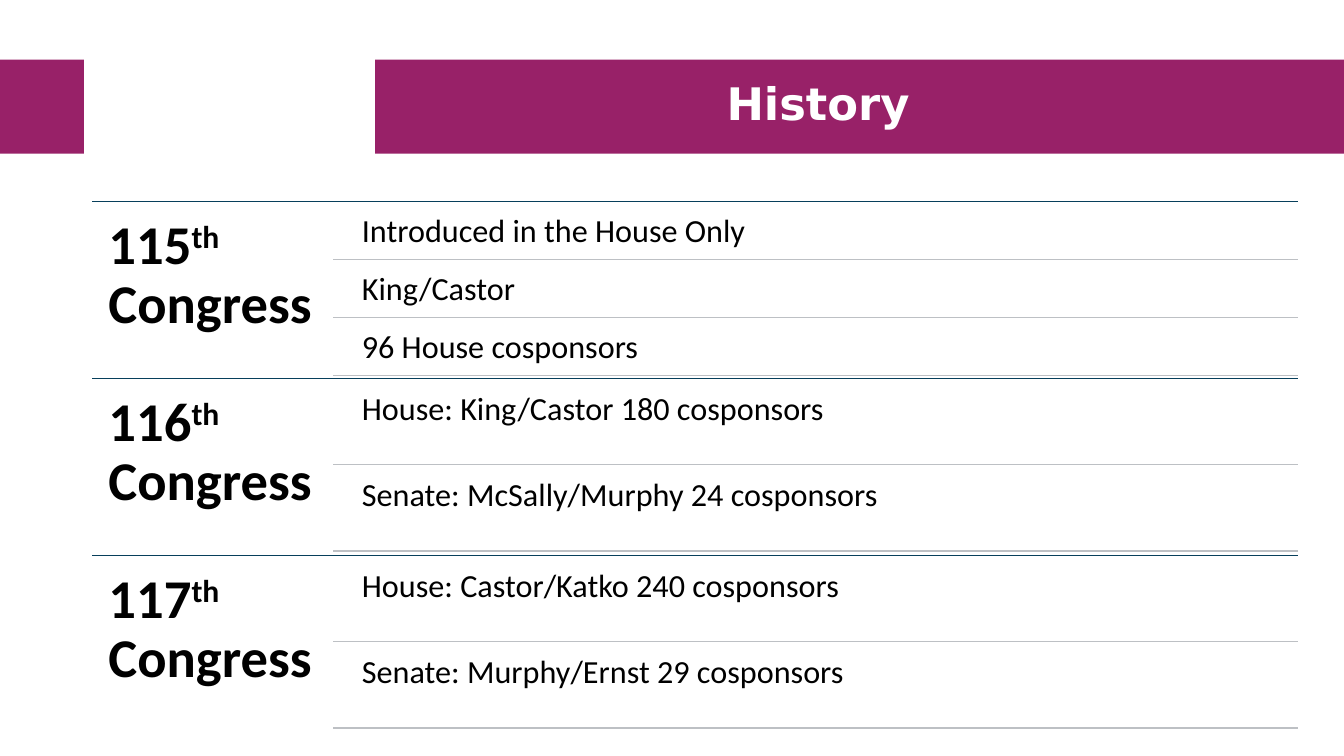
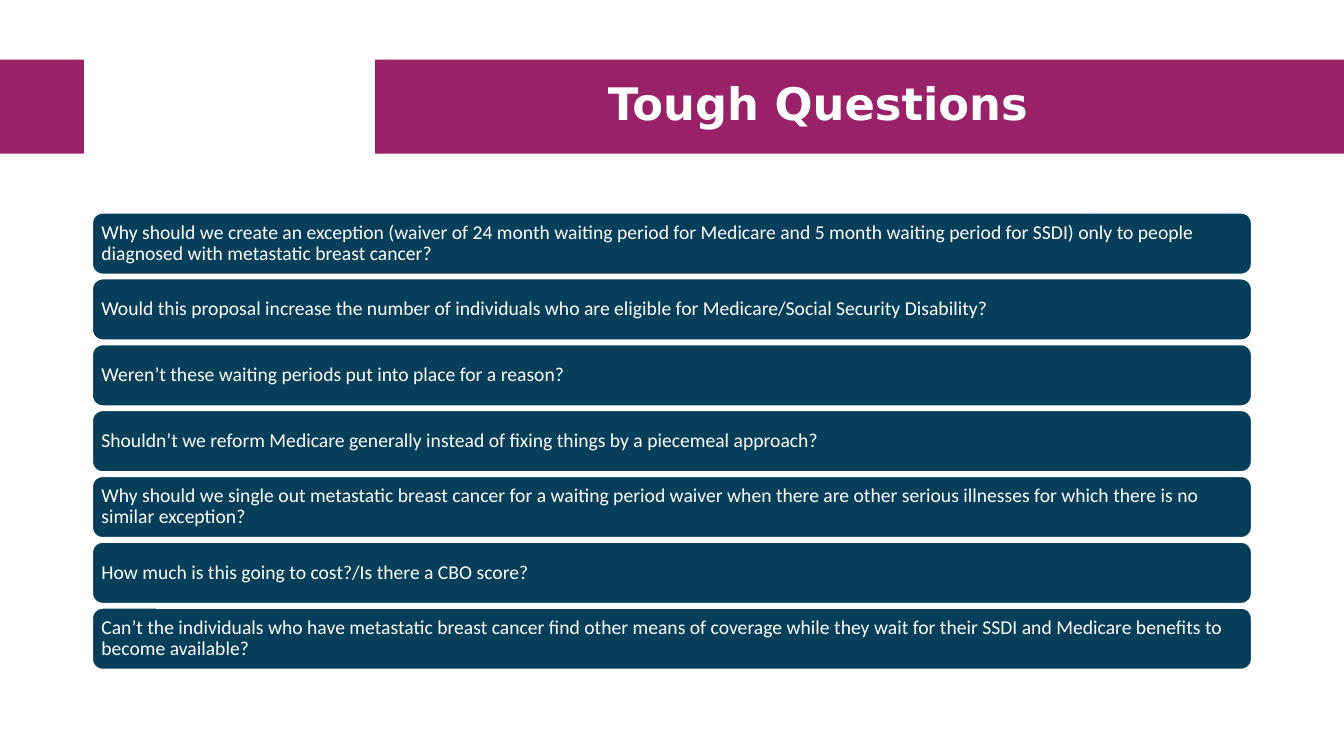
from lxml.etree import SubElement
from pptx import Presentation
from pptx.dml.color import RGBColor
from pptx.enum.shapes import MSO_CONNECTOR, MSO_SHAPE
from pptx.enum.text import MSO_ANCHOR, PP_ALIGN
from pptx.oxml.ns import qn
from pptx.util import Emu, Inches, Pt

COLORS = {"band": "982168", "navy": "073F5B", "grey": "BDC0C4",
          "white": "FFFFFF", "black": "000000"}
CELL = Inches(1 / 12)
COLUMNS, ROWS = 160, 90
LEFT = 11

CONGRESSES = [
    ("115", ["Introduced in the House Only", "King/Castor", "96 House cosponsors"]),
    ("116", ["House: King/Castor 180 cosponsors", "Senate: McSally/Murphy 24 cosponsors"]),
    ("117", ["House: Castor/Katko 240 cosponsors", "Senate: Murphy/Ernst 29 cosponsors"]),
]
QUESTIONS = [
    "Why should we create an exception (waiver of 24 month waiting period for Medicare "
    "and 5 month waiting period for SSDI) only to people diagnosed with metastatic breast cancer?",
    "Would this proposal increase the number of individuals who are eligible for "
    "Medicare/Social Security Disability?",
    "Weren’t these waiting periods put into place for a reason?",
    "Shouldn’t we reform Medicare generally instead of fixing things by a piecemeal approach?",
    "Why should we single out metastatic breast cancer for a waiting period waiver when "
    "there are other serious illnesses for which there is no similar exception?",
    "How much is this going to cost?/Is there a CBO score?",
    "Can’t the individuals who have metastatic breast cancer find other means of coverage "
    "while they wait for their SSDI and Medicare benefits to become available?",
]


def grid(*cells):
    """Turn counts of grid cells into lengths."""
    return [Emu(round(count * CELL)) for count in cells]


def write(box, runs, size, color, inset, font="Calibri", bold=False,
          anchor=MSO_ANCHOR.TOP, align=PP_ALIGN.LEFT):
    """Fill a box with one paragraph of (text, baseline) runs."""
    frame = box.text_frame
    frame.word_wrap = True
    frame.vertical_anchor = anchor
    frame.margin_left = frame.margin_right = Inches(inset)
    frame.margin_top = frame.margin_bottom = Inches(inset)
    para = frame.paragraphs[0]
    para.alignment = align
    para.line_spacing = 0.9
    for text, baseline in runs:
        span = para.add_run()
        span.text = text
        span.font.name = font
        span.font.size = Pt(size)
        span.font.bold = bold
        span.font.color.rgb = RGBColor.from_string(COLORS[color])
        if baseline:
            span._r.get_or_add_rPr().set("baseline", str(baseline * 1000))


deck = Presentation()
deck.slide_width, deck.slide_height = grid(COLUMNS, ROWS)

# Pages with the shared title band
pages = []
for title in ["History", "Tough Questions"]:
    page = deck.slides.add_slide(deck.slide_layouts[6])
    for start, end in [(44.65, COLUMNS), (0, 10)]:
        band = page.shapes.add_shape(
            MSO_SHAPE.RECTANGLE, *grid(start, 7.1, end - start, 11.2))
        band.shadow.inherit = False
        band.fill.solid()
        band.fill.fore_color.rgb = RGBColor.from_string(COLORS["band"])
        band.line.fill.background()
    box = page.shapes.add_textbox(*grid(47, 8.1, 100.8, 9))
    write(box, [(title, 0)], 32, "white", 0.05, font="DejaVu Sans", bold=True,
          anchor=MSO_ANCHOR.MIDDLE, align=PP_ALIGN.CENTER)
    pages.append(page)
history, tough = pages

# History: one block for each Congress, split into equal rows
BLOCK_TOP, BLOCK_HEIGHT = 24, 21.05
RULE_LEFT, ITEM_LEFT, RIGHT = 39.7, 41.9, 154.55
GAP_SHARE = 0.05
for index, (number, items) in enumerate(CONGRESSES):
    top = BLOCK_TOP + index * BLOCK_HEIGHT
    rules = [(LEFT, top, "navy")]
    box = history.shapes.add_textbox(*grid(LEFT, top, RULE_LEFT - LEFT, BLOCK_HEIGHT))
    write(box, [(number, 0), ("th", 30), (" Congress", 0)], 39, "black", 0.16, bold=True)

    height = BLOCK_HEIGHT / (len(items) * (1 + GAP_SHARE) + GAP_SHARE)
    for row, item in enumerate(items):
        item_top = top + height * (GAP_SHARE + row * (1 + GAP_SHARE))
        box = history.shapes.add_textbox(
            *grid(ITEM_LEFT, item_top, RIGHT - ITEM_LEFT, height))
        write(box, [(item, 0)], 23, "black", 0.1)
        rules.append((RULE_LEFT, item_top + height, "grey"))

    for start, level, color in rules:
        rule = history.shapes.add_connector(
            MSO_CONNECTOR.STRAIGHT, *grid(start, level, RIGHT, level))
        rule.line.color.rgb = RGBColor.from_string(COLORS[color])
        rule.line.width = Pt(1)
        SubElement(rule._element.spPr, qn("a:effectLst"))

# Tough Questions: a stack of equal bars
BAR_TOP, BAR_HEIGHT, BAR_PITCH = 25.35, 7.3, 7.84
for index, question in enumerate(QUESTIONS):
    bar = tough.shapes.add_shape(
        MSO_SHAPE.ROUNDED_RECTANGLE,
        *grid(LEFT, BAR_TOP + index * BAR_PITCH, COLUMNS - 2 * LEFT, BAR_HEIGHT))
    bar.shadow.inherit = False
    bar.fill.solid()
    bar.fill.fore_color.rgb = RGBColor.from_string(COLORS["navy"])
    bar.line.color.rgb = RGBColor.from_string(COLORS["white"])
    bar.line.width = Pt(1)
    write(bar, [(question, 0)], 14, "white", 0.06, anchor=MSO_ANCHOR.MIDDLE)

deck.save("out.pptx")
